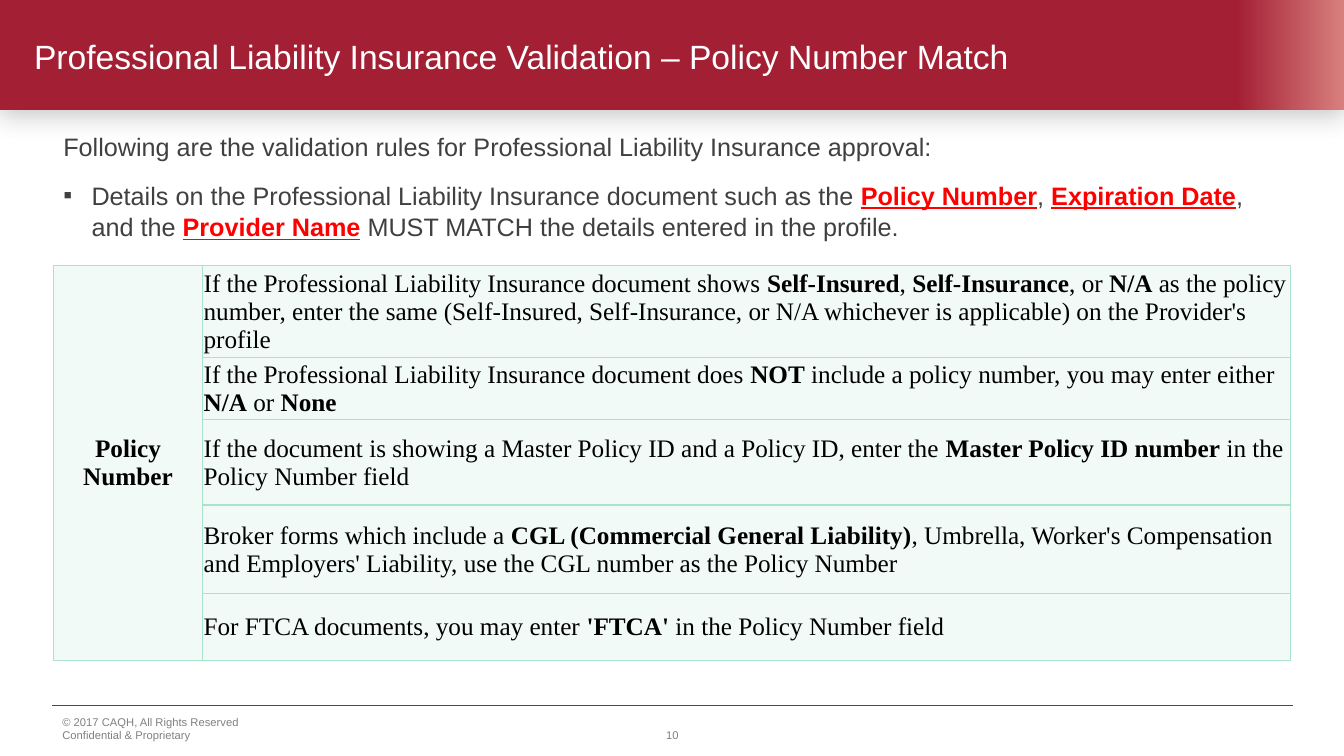
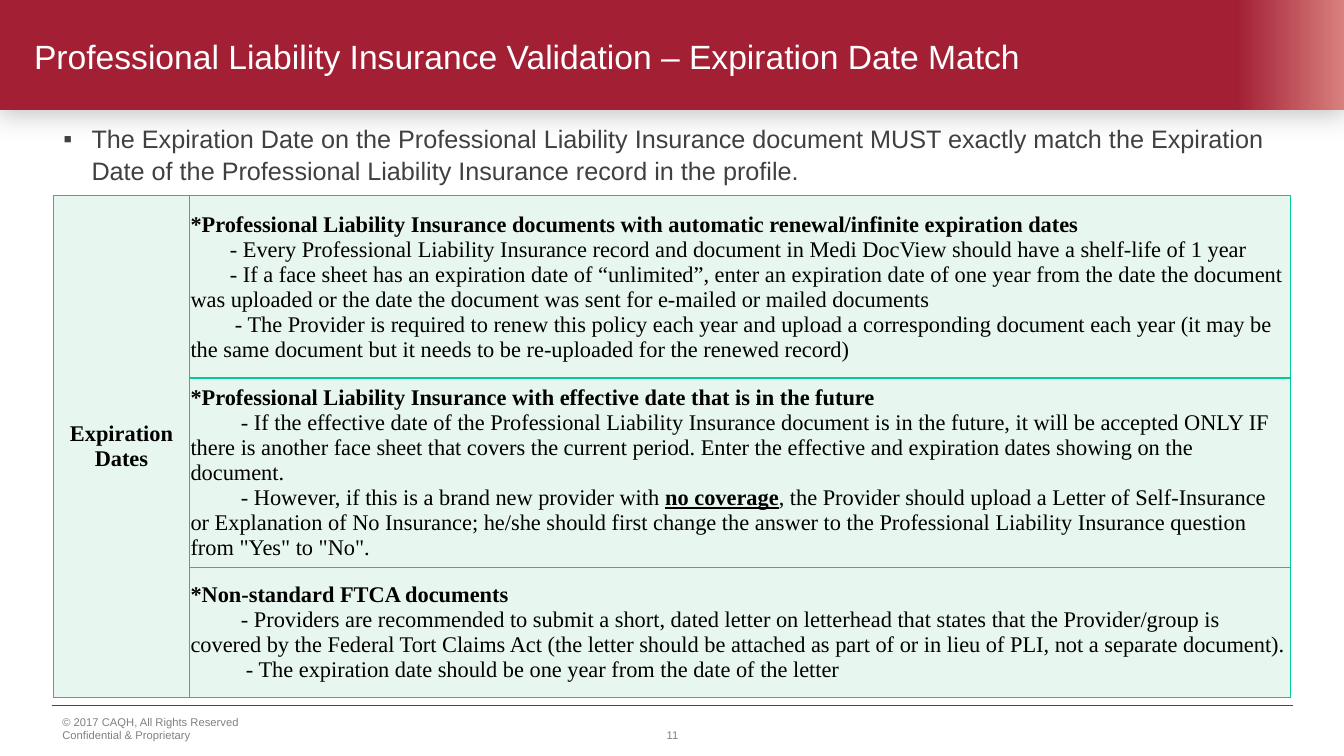
"""Build two slides on validating professional liability insurance."""
from lxml.etree import SubElement
from pptx import Presentation
from pptx.dml.color import RGBColor
from pptx.enum.shapes import MSO_CONNECTOR, MSO_SHAPE
from pptx.enum.text import MSO_ANCHOR as Anchor, PP_ALIGN as Align
from pptx.oxml.ns import qn
from pptx.util import Inches, Pt

BRAND = "A31F34"
BRAND_LIGHT = "D8807E"
BODY_TEXT = "404040"
MUTED = "808080"
ALERT = "FF0000"
SANS, SERIF = "Arial", "Times New Roman"
MARGIN, CONTENT_WIDTH = 0.53, 12.27
COPYRIGHT = ["© 2017 CAQH, All Rights Reserved", "Confidential & Proprietary"]

POLICY_RULES = [
    (0.92, [("If the Professional Liability Insurance document shows |Self-Insured|, "
             "|Self-Insurance|, or |N/A| as the policy number, enter the same (Self-Insured, "
             "Self-Insurance, or N/A whichever is applicable) on the Provider's profile", 0)]),
    (0.56, [("If the Professional Liability Insurance document does |NOT| include a policy "
             "number, you may enter either |N/A| or |None|", 0)]),
    (0.85, [("If the document is showing a Master Policy ID and a Policy ID, enter the "
             "|Master Policy ID number| in the Policy Number field", 0)]),
    (0.88, [("Broker forms which include a |CGL (Commercial General Liability)|, Umbrella, "
             "Worker's Compensation and Employers' Liability, use the CGL number as the "
             "Policy Number", 0)]),
    (0.66, [("For FTCA documents, you may enter |'FTCA'| in the Policy Number field", 0)]),
]
EXPIRATION_RULES = [
    (1.81, [
        ("|*Professional Liability Insurance documents with automatic renewal/infinite "
         "expiration dates|", 0),
        ("- Every Professional Liability Insurance record and document in Medi DocView should "
         "have a shelf-life of 1 year", 0.39),
        ("- If a face sheet has an expiration date of “unlimited”, enter an expiration date of "
         "one year from the date the document was uploaded or the date the document was sent "
         "for e-mailed or mailed documents", 0.39),
        ("- The Provider is required to renew this policy each year and upload a corresponding "
         "document each year (it may be the same document but it needs to be re-uploaded for "
         "the renewed record)", 0.44)]),
    (1.74, [
        ("|*Professional Liability Insurance with effective date that is in the future|", 0),
        ("- If the effective date of the Professional Liability Insurance document is in the "
         "future, it will be accepted ONLY IF there is another face sheet that covers the "
         "current period. Enter the effective and expiration dates showing on the document.",
         0.5),
        ("- However, if this is a brand new provider with |_no coverage|, the Provider should "
         "upload a Letter of Self-Insurance or Explanation of No Insurance; he/she should first "
         "change the answer to the Professional Liability Insurance question from \"Yes\" to "
         "\"No\".", 0.5)]),
    (1.29, [
        ("|*Non-standard FTCA documents|", 0),
        ("- Providers are recommended to submit a short, dated letter on letterhead that states "
         "that the Provider/group is covered by the Federal Tort Claims Act (the letter should "
         "be attached as part of or in lieu of PLI, not a separate document).", 0.5),
        ("- The expiration date should be one year from the date of the letter", 0.55)]),
]


def color(value):
    """Return the colour for a hex string."""
    return RGBColor.from_string(value)


def write_runs(paragraph, text, size, font, ink, accent=None):
    """Write text whose parts between bars are bold, and underlined after an underscore."""
    for index, part in enumerate(text.split("|")):
        if not part:
            continue
        strong = index % 2 == 1
        run = paragraph.add_run()
        run.text = part.removeprefix("_")
        run.font.size, run.font.name = Pt(size), font
        run.font.bold = strong
        run.font.underline = strong and part.startswith("_")
        run.font.color.rgb = color(accent if strong and accent else ink)


def next_paragraph(text_frame, index):
    """Return the first paragraph of a frame or add a further one."""
    return text_frame.add_paragraph() if index else text_frame.paragraphs[0]


def add_text(slide, box, lines, size, ink, anchor, align=Align.LEFT):
    """Add a wrapped text box with plain lines."""
    frame = slide.shapes.add_textbox(*map(Inches, box)).text_frame
    frame.word_wrap, frame.vertical_anchor = True, anchor
    for index, line in enumerate(lines):
        paragraph = next_paragraph(frame, index)
        paragraph.alignment = align
        write_runs(paragraph, line, size, SANS, ink)


def add_bullet(paragraph):
    """Give a paragraph a small square bullet with a hanging indent."""
    properties = paragraph._p.get_or_add_pPr()
    properties.set("marL", str(Inches(0.28)))
    properties.set("indent", str(Inches(-0.28)))
    bullet_color = SubElement(properties, qn("a:buClr"))
    SubElement(bullet_color, qn("a:srgbClr"), val=BODY_TEXT)
    SubElement(properties, qn("a:buFont"), typeface=SANS)
    SubElement(properties, qn("a:buChar"), char="▪")


def add_body(slide, top, height, items):
    """Add the introduction, given as pairs of text and bullet flag."""
    box = map(Inches, (MARGIN, top, CONTENT_WIDTH, height))
    frame = slide.shapes.add_textbox(*box).text_frame
    frame.word_wrap = True
    for index, (text, bulleted) in enumerate(items):
        paragraph = next_paragraph(frame, index)
        if bulleted:
            add_bullet(paragraph)
        paragraph.line_spacing = 1.05
        if index:
            paragraph.space_before = Pt(12)
        write_runs(paragraph, text, 18, SANS, BODY_TEXT, ALERT)


def add_band(slide):
    """Add the shaded title band with its soft shadow."""
    band = slide.shapes.add_shape(MSO_SHAPE.RECTANGLE, 0, 0, Inches(13.33), Inches(1.09))
    band.line.fill.background()
    band.fill.gradient()
    band.fill.gradient_angle = 0
    for stop, position, value in zip(band.fill.gradient_stops, (0.92, 1), (BRAND, BRAND_LIGHT)):
        stop.position, stop.color.rgb = position, color(value)
    band.shadow.inherit = False
    effects = band._element.spPr.find(qn("a:effectLst"))
    shadow = SubElement(effects, qn("a:outerShdw"), blurRad=str(Pt(18)), dist=str(Pt(3)),
                        dir=str(102 * 60000), rotWithShape="0")
    shade = SubElement(shadow, qn("a:srgbClr"), val=MUTED)
    SubElement(shade, qn("a:alpha"), val="43000")


def add_footer(slide, number):
    """Add the footer rule, the copyright lines and the slide number."""
    rule = slide.shapes.add_connector(MSO_CONNECTOR.STRAIGHT, Inches(0.52), Inches(7),
                                      Inches(12.82), Inches(7))
    rule.line.color.rgb, rule.line.width = color(BRAND), Pt(0.75)
    SubElement(rule._element.spPr, qn("a:effectLst"))
    add_text(slide, (0.52, 7.16, 4.92, 0.25), COPYRIGHT, 8, MUTED, Anchor.BOTTOM)
    add_text(slide, (5.17, 7.01, 3, 0.4), [str(number)], 8, MUTED, Anchor.BOTTOM, Align.CENTER)


def style_cell(cell, fill, border):
    """Set the margins, borders and fill of a table cell."""
    cell.margin_left = cell.margin_right = cell.margin_top = Inches(0.01)
    cell.margin_bottom = 0
    cell.vertical_anchor = Anchor.MIDDLE
    properties = cell._tc.get_or_add_tcPr()
    for side in ("lnL", "lnR", "lnT", "lnB"):
        line = SubElement(properties, qn(f"a:{side}"), w=str(Pt(1)))
        SubElement(SubElement(line, qn("a:solidFill")), qn("a:srgbClr"), val=border)
    cell.fill.solid()
    cell.fill.fore_color.rgb = color(fill)


def add_rules_table(slide, top, label, label_width, rules, size, fill, border):
    """Add a table with one merged label cell beside a row for each rule."""
    height = sum(row_height for row_height, _ in rules)
    box = map(Inches, (MARGIN, top, CONTENT_WIDTH, height))
    table = slide.shapes.add_table(len(rules), 2, *box).table
    table.first_row = table.horz_banding = False
    table.columns[0].width = Inches(label_width)
    table.columns[1].width = Inches(CONTENT_WIDTH - label_width)
    for row, (row_height, paragraphs) in enumerate(rules):
        table.rows[row].height = Inches(row_height)
        for column in range(2):
            style_cell(table.cell(row, column), fill, border)
        frame = table.cell(row, 1).text_frame
        for index, (text, indent) in enumerate(paragraphs):
            paragraph = next_paragraph(frame, index)
            paragraph._p.get_or_add_pPr().set("indent", str(Inches(indent)))
            write_runs(paragraph, text, size, SERIF, "000000")
    table.cell(0, 0).merge(table.cell(len(rules) - 1, 0))
    heading = table.cell(0, 0).text_frame.paragraphs[0]
    heading.alignment = Align.CENTER
    write_runs(heading, f"|{label}|", size, SERIF, "000000")


def add_slide(presentation, topic, number):
    """Add a slide with the shared band, title and footer."""
    slide = presentation.slides.add_slide(presentation.slide_layouts[6])
    add_band(slide)
    add_footer(slide, number)
    title = f"Professional Liability Insurance Validation – {topic}"
    add_text(slide, (0.24, 0.15, 12.87, 0.81), [title], 24, "FFFFFF", Anchor.MIDDLE)
    return slide


def main():
    """Build and save the presentation."""
    presentation = Presentation()
    presentation.slide_width, presentation.slide_height = Inches(13.33), Inches(7.5)

    slide = add_slide(presentation, "Policy Number Match", 10)
    add_body(slide, 1.24, 1.25, [
        ("Following are the validation rules for Professional Liability Insurance approval:",
         False),
        ("Details on the Professional Liability Insurance document such as the "
         "|_Policy Number|, |_Expiration Date|, and the |_Provider Name| MUST MATCH the "
         "details entered in the profile.", True)])
    add_rules_table(slide, 2.63, "Policy Number", 1.48, POLICY_RULES, 18, "F1FAF6", "AAE2CA")

    slide = add_slide(presentation, "Expiration Date Match", 11)
    add_body(slide, 1.16, 0.75, [
        ("The Expiration Date on the Professional Liability Insurance document MUST exactly "
         "match the Expiration Date of the Professional Liability Insurance record in the "
         "profile.", True)])
    add_rules_table(slide, 1.94, "Expiration Dates", 1.35, EXPIRATION_RULES, 16,
                    "E7F6EF", "00CC99")

    presentation.save("out.pptx")


if __name__ == "__main__":
    main()
